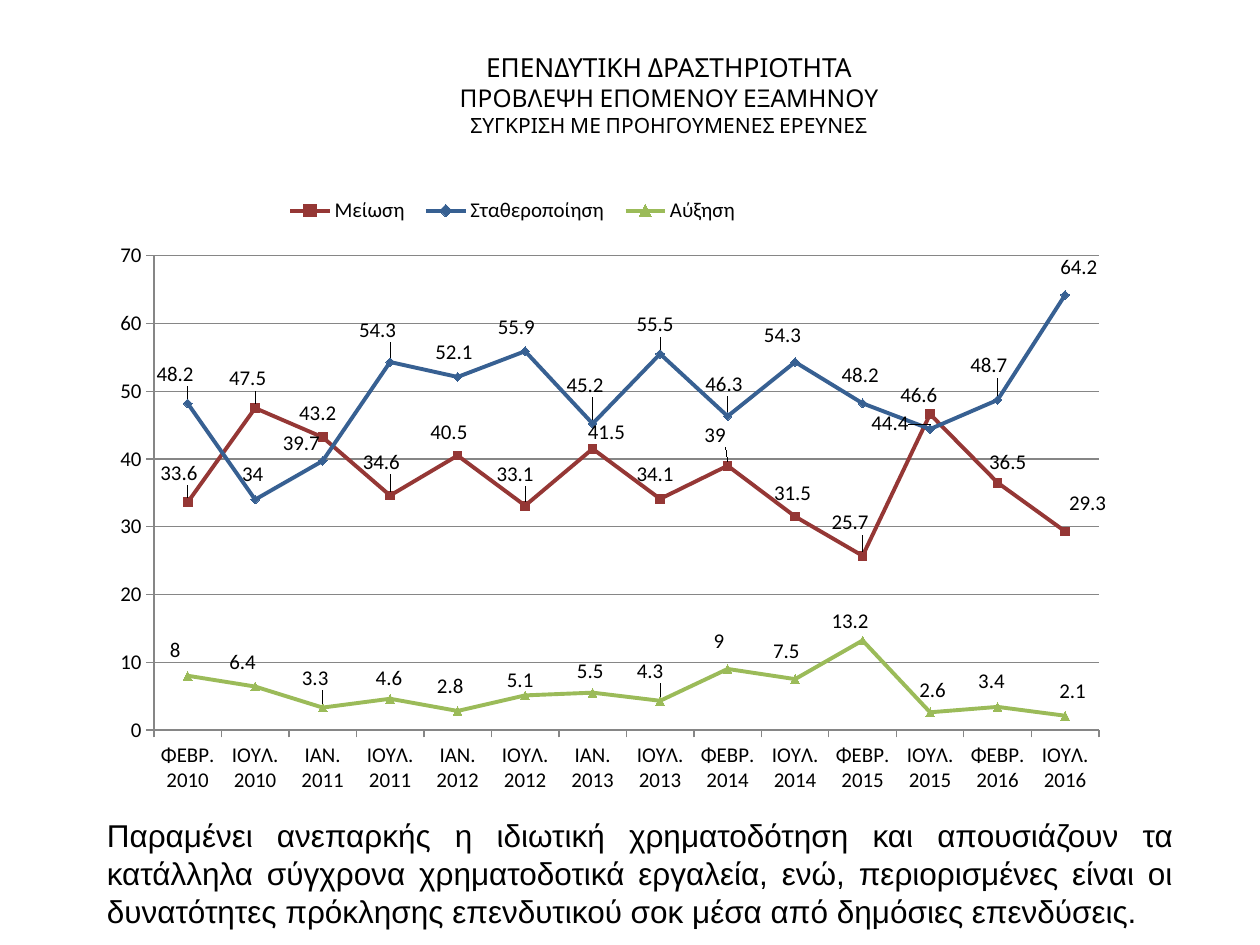
from lxml import etree
from pptx import Presentation
from pptx.chart.data import CategoryChartData
from pptx.dml.color import RGBColor
from pptx.enum.chart import (XL_CHART_TYPE, XL_LABEL_POSITION, XL_LEGEND_POSITION,
                             XL_MARKER_STYLE, XL_TICK_MARK)
from pptx.enum.text import MSO_ANCHOR, PP_ALIGN
from pptx.oxml.ns import qn
from pptx.util import Inches, Pt

LINE_MARKERS = XL_CHART_TYPE.LINE_MARKERS
ABOVE = XL_LABEL_POSITION.ABOVE
RIGHT = XL_LEGEND_POSITION.RIGHT
OUTSIDE = XL_TICK_MARK.OUTSIDE
SQUARE, DIAMOND, TRIANGLE = XL_MARKER_STYLE.SQUARE, XL_MARKER_STYLE.DIAMOND, XL_MARKER_STYLE.TRIANGLE
TOP = MSO_ANCHOR.TOP
CENTER, JUSTIFY = PP_ALIGN.CENTER, PP_ALIGN.JUSTIFY

BLACK, GRAY = "000000", "868686"
PERIODS = ["ΦΕΒΡ. 2010", "ΙΟΥΛ. 2010", "ΙΑΝ. 2011", "ΙΟΥΛ. 2011", "ΙΑΝ. 2012",
           "ΙΟΥΛ. 2012", "ΙΑΝ. 2013", "ΙΟΥΛ. 2013", "ΦΕΒΡ. 2014", "ΙΟΥΛ. 2014",
           "ΦΕΒΡ. 2015", "ΙΟΥΛ. 2015", "ΦΕΒΡ. 2016", "ΙΟΥΛ. 2016"]
FORECASTS = [
    ("Μείωση", "953735", SQUARE,
     [33.6, 47.5, 43.2, 34.6, 40.5, 33.1, 41.5, 34.1, 39, 31.5, 25.7, 46.6, 36.5, 29.3],
     [(-7, -6), (-6, -6), (-4, -2), (-7, -9), (-7, -1), (-8, -8), (11, 4),
      (-4, -2), (-10, -7), (-2, -1), (-10, -9), (-9, 2), (8, 1), (18, -5)]),
    ("Σταθεροποίηση", "376092", DIAMOND,
     [48.2, 34, 39.7, 54.3, 52.1, 55.9, 45.2, 55.5, 46.3, 54.3, 48.2, 44.4, 48.7, 64.2],
     [(-10, -6), (-2, -3), (-17, 3), (-10, -8), (-3, -2), (-7, -2), (-6, -13),
      (-4, -6), (-3, -8), (-10, -4), (-2, -5), (-32, 13), (-7, -10), (11, -5)]),
    ("Αύξηση", "9BBB59", TRIANGLE,
     [8, 6.4, 3.3, 4.6, 2.8, 5.1, 5.5, 4.3, 9, 7.5, 13.2, 2.6, 3.4, 2.1],
     [(-10, -3), (-10, -2), (-6, -6), (-1, 1), (-6, -2), (-4, 5), (-2, 0),
      (-8, -6), (-7, -5), (-7, -5), (-10, 2), (2, 0), (-5, -3), (6, -2)]),
]


def color(value):
    """Turn a hex string into a colour."""
    return RGBColor.from_string(value)


def style_font(font, size, name, hex_color=BLACK):
    """Set the size, typeface and colour of a font."""
    font.size, font.name, font.bold = Pt(size), name, False
    font.color.rgb = color(hex_color)


def add_text(slide, box, lines, font, align):
    """Add one paragraph made of (text, size) lines."""
    frame = slide.shapes.add_textbox(*map(Inches, box)).text_frame
    frame.word_wrap = True
    frame.vertical_anchor = TOP
    paragraph = frame.paragraphs[0]
    paragraph.alignment = align
    for index, (text, size) in enumerate(lines):
        if index:
            paragraph.add_line_break()
        run = paragraph.add_run()
        run.text = text
        style_font(run.font, size, font)


def make_layout(**settings):
    """Build a manual chart layout from its settings."""
    layout = etree.Element(qn("c:layout"))
    manual = etree.SubElement(layout, qn("c:manualLayout"))
    for tag, value in settings.items():
        etree.SubElement(manual, qn(f"c:{tag}")).set("val", str(value))
    return layout


def style_axis(axis):
    """Format an axis and its tick labels."""
    style_font(axis.tick_labels.font, 12, "Calibri")
    axis.major_tick_mark = OUTSIDE
    axis.format.line.color.rgb = color(GRAY)


def style_series(series, hex_color, marker, shifts, box):
    """Format a line and shift its labels by hundredths of an inch."""
    series.smooth = False
    series.format.line.color.rgb = color(hex_color)
    series.format.line.width = Pt(2.25)
    series.marker.style, series.marker.size = marker, 5
    series.marker.format.fill.solid()
    series.marker.format.fill.fore_color.rgb = color(hex_color)
    series.marker.format.line.color.rgb = color(hex_color)
    for index, (right, down) in enumerate(shifts):
        label = series.points[index].data_label
        style_font(label.font, 12, "Calibri")
        label.position = ABOVE
    labels = series.data_labels
    labels.show_value = True
    labels.position = ABOVE
    style_font(labels.font, 12, "Calibri")
    for item, (right, down) in zip(labels._element.findall(qn("c:dLbl")), shifts):
        item.find(qn("c:idx")).addnext(
            make_layout(x=round(right / 100 / box[2], 4), y=round(down / 100 / box[3], 4)))


def add_forecast_chart(slide, box):
    """Add the line chart of the forecasts."""
    data = CategoryChartData()
    data.categories = PERIODS
    for name, _, _, values, _ in FORECASTS:
        data.add_series(name, values)
    chart = slide.shapes.add_chart(LINE_MARKERS, *map(Inches, box), data).chart
    chart.has_title = False
    style_font(chart.font, 18, "Cambria")
    style_axis(chart.category_axis)
    style_axis(chart.value_axis)
    chart.value_axis.minimum_scale, chart.value_axis.maximum_scale = 0, 70
    chart.value_axis.major_unit = 10
    chart.value_axis.has_major_gridlines = True
    chart.value_axis.major_gridlines.format.line.color.rgb = color(GRAY)
    plot = chart.plots[0]
    plot.vary_by_categories = False
    for series, (_, hex_color, marker, _, shifts) in zip(plot.series, FORECASTS):
        style_series(series, hex_color, marker, shifts, box)

    chart.has_legend = True
    legend = chart.legend
    legend.position = RIGHT
    legend.include_in_layout = False
    style_font(legend.font, 12, "Calibri")
    for old in legend._element.findall(qn("c:layout")):
        legend._element.remove(old)
    legend._element.find(qn("c:legendPos")).addnext(
        make_layout(xMode="edge", yMode="edge", x=0.18, y=0.01, w=0.47, h=0.06))
    area = chart._chartSpace.chart.plotArea
    for old in area.findall(qn("c:layout")):
        area.remove(old)
    area.insert(0, make_layout(layoutTarget="inner", xMode="edge", yMode="edge",
                               x=0.059, y=0.111, w=0.938, h=0.747))


def main():
    """Build and save the slide."""
    deck = Presentation()
    deck.slide_width, deck.slide_height = Inches(10), Inches(7.5)
    slide = deck.slides.add_slide(deck.slide_layouts[6])
    add_text(slide, (1.25, 0.36, 8.12, 0.54),
             [("ΕΠΕΝΔΥΤΙΚΗ ΔΡΑΣΤΗΡΙΟΤΗΤΑ", 15), ("ΠΡΟΒΛΕΨΗ ΕΠΟΜΕΝΟΥ ΕΞΑΜΗΝΟΥ", 14),
              ("ΣΥΓΚΡΙΣΗ ΜΕ ΠΡΟΗΓΟΥΜΕΝΕΣ ΕΡΕΥΝΕΣ", 12)], "Cabin", CENTER)
    add_forecast_chart(slide, (0.75, 1.47, 8.03, 5.04))
    add_text(slide, (0.75, 6.43, 8.66, 1.01),
             [("Παραμένει ανεπαρκής η ιδιωτική χρηματοδότηση και απουσιάζουν τα κατάλληλα "
               "σύγχρονα χρηματοδοτικά εργαλεία, ενώ, περιορισμένες είναι οι δυνατότητες "
               "πρόκλησης επενδυτικού σοκ μέσα από δημόσιες επενδύσεις.", 18)],
             "Arial", JUSTIFY)
    deck.save("out.pptx")


if __name__ == "__main__":
    main()
